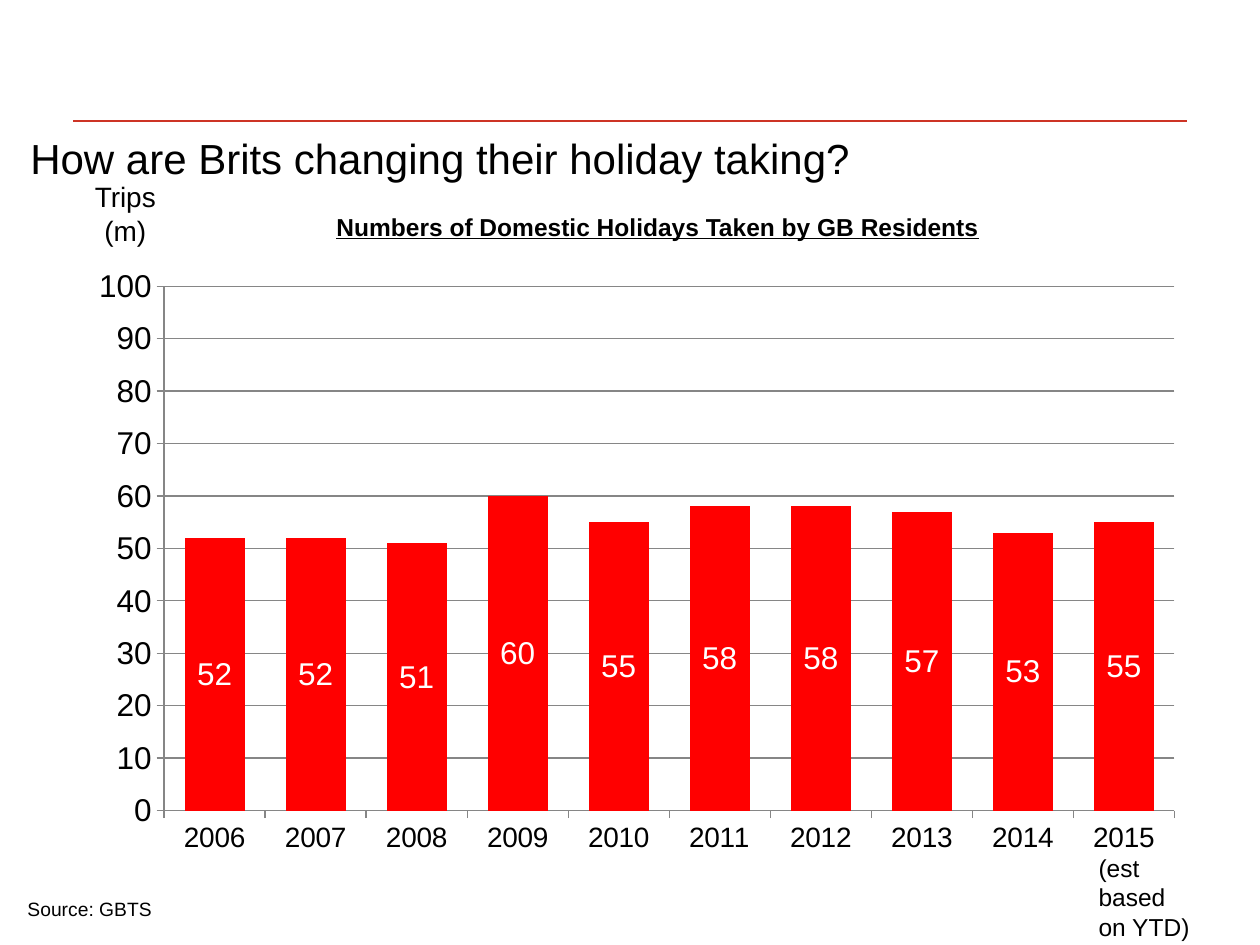
"""Builds a slide charting domestic holidays taken by GB residents."""
from lxml import etree
from pptx import Presentation
from pptx import util as u
from pptx.chart.data import CategoryChartData
from pptx.dml.color import RGBColor
from pptx.enum import chart as charts, shapes, text
from pptx.oxml import ns

BLACK = RGBColor(0x00, 0x00, 0x00)
WHITE = RGBColor(0xFF, 0xFF, 0xFF)
RED = RGBColor(0xFF, 0x00, 0x00)
RULE_RED = RGBColor(0xCD, 0x34, 0x25)
GREY = RGBColor(0x86, 0x86, 0x86)
FONT = "Arial"

TRIPS = {2006: 52, 2007: 52, 2008: 51, 2009: 60, 2010: 55,
         2011: 58, 2012: 58, 2013: 57, 2014: 53, 2015: 55}
PLOT_AREA = {"x": 0.08, "y": 0.05, "w": 0.9, "h": 0.86}


class SlideWriter:
    """Holds the style and the current slide."""

    def __init__(self, page):
        self.page = page

    def style(self, font, size, color=BLACK, bold=False, underline=False):
        """Apply the slide's typeface with the given look."""
        font.name = FONT
        font.size = u.Pt(size)
        font.color.rgb = color
        font.bold = bold
        font.underline = underline

    def fill(self, frame, lines, size, align, **look):
        """Write one paragraph per line into a text frame."""
        frame.word_wrap = True
        for index, line in enumerate(lines):
            para = frame.add_paragraph() if index else frame.paragraphs[0]
            para.alignment = align
            span = para.add_run()
            span.text = line
            self.style(span.font, size, **look)

    def title(self, place, line, size):
        """Move and fill the title placeholder."""
        box = self.page.shapes.title
        box.left, box.top, box.width, box.height = map(u.Inches, place)
        box.text_frame.auto_size = text.MSO_AUTO_SIZE.NONE
        box.text_frame.vertical_anchor = text.MSO_ANCHOR.MIDDLE
        self.fill(box.text_frame, [line], size, text.PP_ALIGN.LEFT)

    def label(self, place, lines, size, align=text.PP_ALIGN.LEFT, **look):
        """Add a text box."""
        box = self.page.shapes.add_textbox(*map(u.Inches, place))
        self.fill(box.text_frame, lines, size, align, **look)
        box.text_frame.auto_size = text.MSO_AUTO_SIZE.SHAPE_TO_FIT_TEXT

    def rule(self, left, right, top):
        """Add a thin horizontal line."""
        line = self.page.shapes.add_connector(
            shapes.MSO_CONNECTOR.STRAIGHT,
            *map(u.Inches, (left, top, right, top)))
        line.line.color.rgb = RULE_RED
        line.line.width = u.Pt(0.75)
        etree.SubElement(line._element.spPr, ns.qn("a:effectLst"))

    def axis(self, axis, size):
        """Format a chart axis."""
        axis.major_tick_mark = charts.XL_TICK_MARK.OUTSIDE
        axis.minor_tick_mark = charts.XL_TICK_MARK.NONE
        axis.format.line.color.rgb = GREY
        self.style(axis.tick_labels.font, size)

    def column_chart(self, place, values, maximum, step):
        """Add a stacked column chart with centred value labels."""
        data = CategoryChartData(number_format="0")
        data.categories = [str(year) for year in values]
        data.add_series("Series 1", values.values())
        chart = self.page.shapes.add_chart(
            charts.XL_CHART_TYPE.COLUMN_STACKED,
            *map(u.Inches, place), data).chart
        chart.has_legend = False
        chart.has_title = False
        self.style(chart.font, 18)
        self.axis(chart.category_axis, 16)
        scale = chart.value_axis
        self.axis(scale, 18)
        scale.minimum_scale, scale.maximum_scale = 0, maximum
        scale.major_unit = step
        scale.has_major_gridlines = True
        scale.major_gridlines.format.line.color.rgb = GREY

        plot = chart.plots[0]
        plot.gap_width, plot.overlap = 68, 100
        plot.vary_by_categories = False
        series = plot.series[0]
        series.format.fill.solid()
        series.format.fill.fore_color.rgb = RED
        labels = series.data_labels
        labels.show_value = True
        labels.number_format = "0"
        labels.number_format_is_linked = False
        labels.position = charts.XL_LABEL_POSITION.CENTER
        self.style(labels.font, 18, WHITE)
        self.plot_layout(chart)

    def plot_layout(self, chart):
        """Fix the inner plot area as fractions of the chart."""
        area = chart._chartSpace.chart.plotArea
        for old in area.findall(ns.qn("c:layout")):
            area.remove(old)
        layout = etree.Element(ns.qn("c:layout"))
        area.insert(0, layout)
        manual = etree.SubElement(layout, ns.qn("c:manualLayout"))
        settings = {"layoutTarget": "inner", "xMode": "edge",
                    "yMode": "edge", **PLOT_AREA}
        for name, value in settings.items():
            etree.SubElement(manual, ns.qn(f"c:{name}"), val=str(value))


def main():
    """Build and save the deck."""
    deck = Presentation()
    deck.slide_width, deck.slide_height = u.Inches(10), u.Inches(7.5)
    writer = SlideWriter(deck.slides.add_slide(deck.slide_layouts[5]))
    center = text.PP_ALIGN.CENTER
    writer.rule(0.58, 9.42, 0.96)
    writer.column_chart((0.59, 2.03, 8.91, 4.84), TRIPS, 100, 10)
    writer.label((0.56, 1.38, 0.87, 0.64), ["Trips", "(m)"], 16, center)
    writer.label((0.56, 1.63, 9.32, 0.34),
                 ["Numbers of Domestic Holidays Taken by GB Residents"],
                 14, center, bold=True, underline=True)
    writer.title((0.14, 0.98, 9.82, 0.55),
                 "How are Brits changing their holiday taking?", 24)
    writer.label((0.12, 7.07, 5.2, 0.29), ["Source: GBTS"], 11)
    writer.label((8.62, 6.72, 0.98, 0.81), ["(est based on YTD)"], 14)
    deck.save("out.pptx")


if __name__ == "__main__":
    main()
